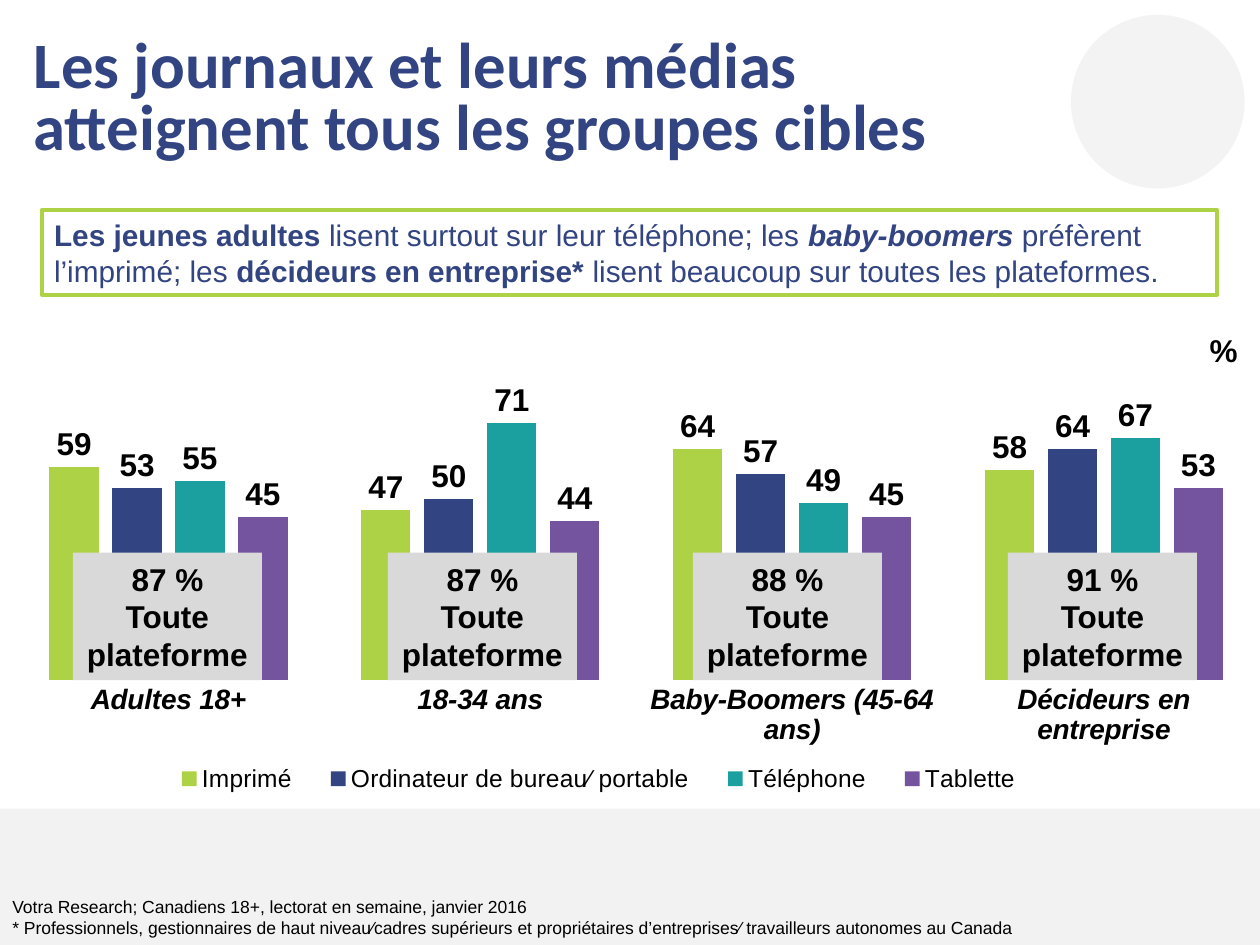
from lxml import etree
from pptx import Presentation
from pptx.chart.data import CategoryChartData
from pptx.dml.color import RGBColor
from pptx.enum.chart import XL_CHART_TYPE as ChartType, XL_LABEL_POSITION as LabelPosition
from pptx.enum.chart import XL_LEGEND_POSITION as LegendPosition, XL_TICK_MARK as TickMark
from pptx.enum.shapes import MSO_SHAPE as Shape
from pptx.enum.text import MSO_ANCHOR as Anchor, PP_ALIGN as Align
from pptx.oxml import parse_xml
from pptx.oxml.ns import nsdecls
from pptx.util import Cm, Pt

NAVY, GREEN, BLACK = "324481", "AED246", "000000"
CATEGORIES = ["Adultes 18+", "18-34 ans", "Baby-Boomers (45-64 ans)", "Décideurs en entreprise"]
SERIES = [
    ("Imprimé", (59, 47, 64, 58), GREEN),
    ("Ordinateur de bureau∕ portable", (53, 50, 57, 64), NAVY),
    ("Téléphone", (55, 71, 49, 67), "1C9F9F"),
    ("Tablette", (45, 44, 45, 53), "74539F"),
]
BADGES = [(1.47, "87 %"), (7.82, "87 %"), (13.97, "88 %"), (20.32, "91 %")]
MESSAGE = [
    ("Les jeunes adultes ", True, False),
    ("lisent surtout sur leur téléphone; les ", False, False),
    ("baby-boomers ", True, True),
    ("préfèrent l’imprimé; les ", False, False),
    ("décideurs en entreprise* ", True, False),
    ("lisent beaucoup sur toutes les plateformes.", False, False),
]
SOURCES = [
    "Votra Research; Canadiens 18+, lectorat en semaine, janvier 2016",
    "* Professionnels, gestionnaires de haut niveau∕cadres supérieurs et propriétaires "
    "d’entreprises∕ travailleurs autonomes au Canada",
]


def color(value):
    """Turn a hex string into a colour."""
    return RGBColor.from_string(value)


def style_font(font, size, value=BLACK, bold=False, italic=False, name="Arial"):
    """Set the face, size, colour and weight of a font."""
    font.name, font.size, font.bold, font.italic = name, Pt(size), bold, italic
    font.color.rgb = color(value)


def add_panel(page, kind, bounds, fill=None, line=None):
    """Add a flat shape with an optional fill and outline."""
    panel = page.shapes.add_shape(kind, *map(Cm, bounds))
    panel.shadow.inherit = False
    if fill:
        panel.fill.solid()
        panel.fill.fore_color.rgb = color(fill)
    else:
        panel.fill.background()
    if line:
        panel.line.color.rgb = color(line)
        panel.line.width = Pt(2.25)
    else:
        panel.line.fill.background()
    return panel


def write_lines(box, lines, size, align=Align.LEFT, **look):
    """Write one paragraph per line in a single style."""
    frame = box.text_frame
    frame.word_wrap = True
    frame.text = "\n".join(lines)
    for para in frame.paragraphs:
        para.alignment = align
        for span in para.runs:
            style_font(span.font, size, **look)


def add_text(page, bounds, lines, size, **look):
    """Add a text box."""
    box = page.shapes.add_textbox(*map(Cm, bounds))
    write_lines(box, lines, size, **look)
    return box


def add_message(page):
    """Add the outlined key message with its emphasised words."""
    box = add_panel(page, Shape.RECTANGLE, (0.84, 4.24, 23.7, 1.7), line=GREEN)
    box.text_frame.word_wrap = True
    box.text_frame.vertical_anchor = Anchor.MIDDLE
    para = box.text_frame.paragraphs[0]
    para.alignment = Align.LEFT
    for words, bold, italic in MESSAGE:
        span = para.add_run()
        span.text = words
        style_font(span.font, 17, NAVY, bold, italic)


def place(element, x, y, width, height, inner=False):
    """Fix the position of a chart part as fractions of the chart."""
    for old in element.findall("{*}layout"):
        element.remove(old)
    target = '<c:layoutTarget val="inner"/>' if inner else ""
    sizes = "".join(f'<c:{tag} val="{value}"/>'
                    for tag, value in zip("xywh", (x, y, width, height)))
    layout = parse_xml(
        f'<c:layout {nsdecls("c")}><c:manualLayout>{target}<c:xMode val="edge"/>'
        f'<c:yMode val="edge"/>{sizes}</c:manualLayout></c:layout>')
    if inner:
        element.insert(0, layout)
    else:
        element.find("{*}legendPos").addnext(layout)


def add_readership_chart(page):
    """Add the clustered columns of readership by group and platform."""
    data = CategoryChartData()
    data.categories = CATEGORIES
    for name, values, _ in SERIES:
        data.add_series(name, values)
    bounds = map(Cm, (0, 5.99, 25.4, 10.85))
    chart = page.shapes.add_chart(ChartType.COLUMN_CLUSTERED, *bounds, data).chart
    chart.has_title = False
    style_font(chart.font, 18)
    space = chart.element
    backing = parse_xml(f'<c:spPr {nsdecls("c", "a")}><a:noFill/><a:ln><a:noFill/></a:ln></c:spPr>')
    space.find("{*}chart").addnext(backing)

    plot = chart.plots[0]
    plot.gap_width, plot.overlap, plot.vary_by_categories = 150, -28, False
    for series, (_, _, fill) in zip(plot.series, SERIES):
        series.format.fill.solid()
        series.format.fill.fore_color.rgb = color(fill)
        labels = series.data_labels
        labels.show_value = True
        labels.position = LabelPosition.OUTSIDE_END
        style_font(labels.font, 18, bold=True)

    groups, scale = chart.category_axis, chart.value_axis
    groups.major_tick_mark = TickMark.NONE
    groups.format.line.fill.background()
    style_font(groups.tick_labels.font, 16, bold=True, italic=True)
    scale.minimum_scale, scale.maximum_scale = 0, 80
    scale.has_major_gridlines = False
    scale.visible = False

    chart.has_legend = True
    chart.legend.position = LegendPosition.BOTTOM
    chart.legend.include_in_layout = False
    style_font(chart.legend.font, 14)
    place(space.find(".//{*}plotArea"), 0.01, 0.174, 0.99, 0.537, inner=True)
    place(space.find(".//{*}legend"), 0.12, 0.85, 0.71, 0.09)


def add_badge(page, left, share):
    """Add the grey total for all platforms over a group."""
    badge = add_panel(page, Shape.RECTANGLE, (left, 11.14, 3.81, 2.57), fill="D9D9D9")
    badge.text_frame.vertical_anchor = Anchor.MIDDLE
    write_lines(badge, [share, "Toute plateforme"], 18, Align.CENTER, bold=True)


def main():
    """Build the slide and save it."""
    deck = Presentation()
    deck.slide_width, deck.slide_height = Cm(25.4), Cm(19.05)
    page = deck.slides.add_slide(deck.slide_layouts[6])
    add_panel(page, Shape.RECTANGLE, (0, 16.3, 25.4, 2.75), fill="F2F2F2")
    add_panel(page, Shape.OVAL, (21.59, 0.3, 3.5, 3.5), fill="F3F3F3")
    title = add_text(page, (0.43, 0.66, 21.7, 2.8),
                     ["Les journaux et leurs médias atteignent tous les groupes cibles"],
                     37, value=NAVY, bold=True, name="Calibri")
    title.text_frame.paragraphs[0].line_spacing = 0.8
    add_message(page)
    add_text(page, (23.93, 6.55, 1.47, 1.02), ["%"], 18, align=Align.CENTER, bold=True)
    add_text(page, (0, 17.93, 25.37, 1.12), SOURCES, 10)
    add_readership_chart(page)
    for left, share in BADGES:
        add_badge(page, left, share)
    deck.save("out.pptx")


if __name__ == "__main__":
    main()
